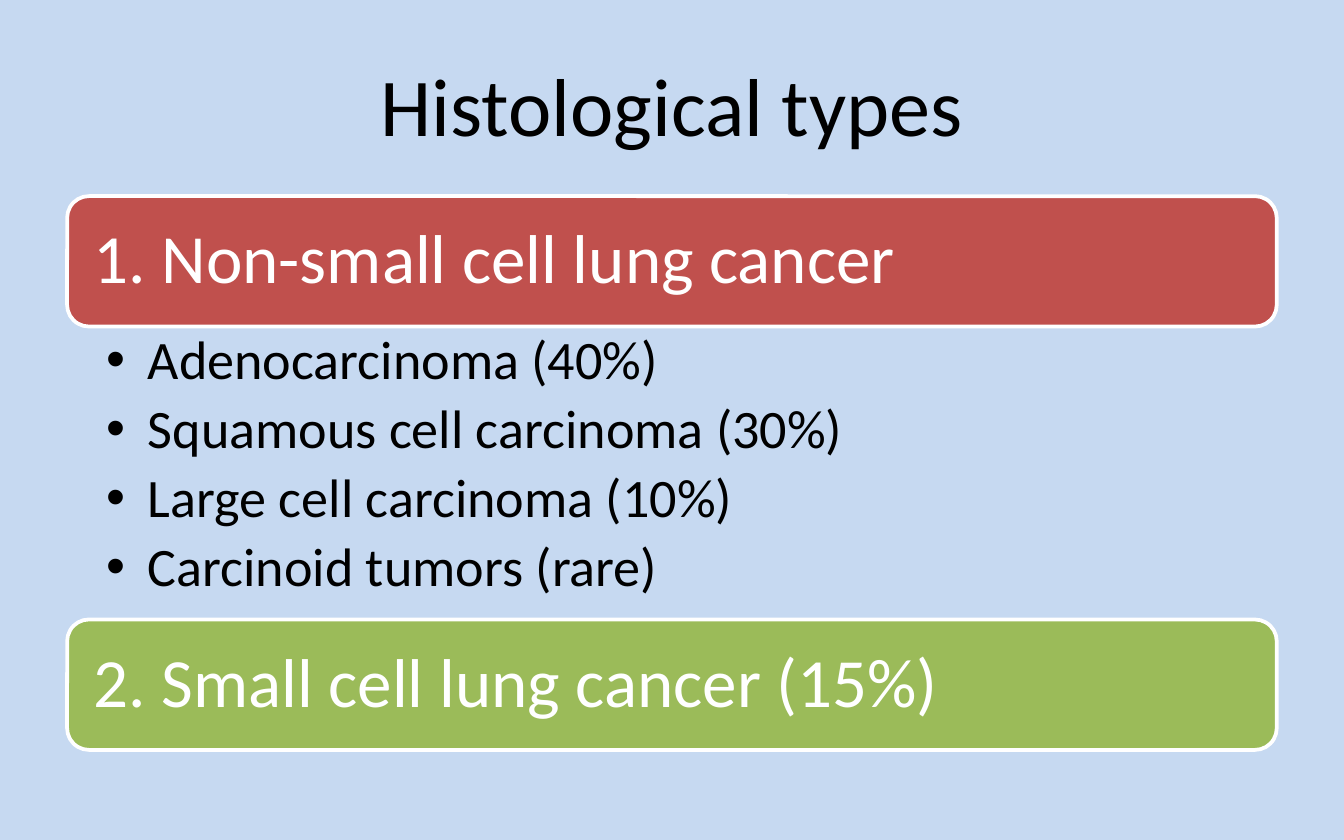
from dataclasses import dataclass

from lxml.etree import SubElement
from pptx import Presentation
from pptx.dml.color import RGBColor
from pptx.enum.shapes import MSO_SHAPE
from pptx.enum.text import MSO_ANCHOR, PP_ALIGN
from pptx.oxml.ns import qn
from pptx.slide import Slide
from pptx.text.text import TextFrame, _Paragraph
from pptx.util import Inches, Pt

COLORS = {
    "background": "C6D9F1",
    "text": "000000",
    "white": "FFFFFF",
    "red": "C0504D",
    "green": "9BBB59",
}
FONT = "Calibri"
LEFT, WIDTH = 0.5, 9
BANNER_HEIGHT = 0.97
LIST_HEIGHT = 2.18
BULLET_INDENT = 0.31


@dataclass
class CancerType:
    heading: str
    color: str
    subtypes: tuple[str, ...] = ()


CANCER_TYPES = [
    CancerType(
        "1. Non-small cell lung cancer",
        "red",
        (
            "Adenocarcinoma (40%)",
            "Squamous cell carcinoma (30%)",
            "Large cell carcinoma (10%)",
            "Carcinoid tumors (rare)",
        ),
    ),
    CancerType("2. Small cell lung cancer (15%)", "green"),
]


def rgb(name: str) -> RGBColor:
    return RGBColor.from_string(COLORS[name])


def set_frame(frame: TextFrame, anchor: MSO_ANCHOR, side: float, top: float) -> None:
    frame.word_wrap = True
    frame.vertical_anchor = anchor
    frame.margin_left = frame.margin_right = Inches(side)
    frame.margin_top = frame.margin_bottom = Inches(top)


def add_text(paragraph: _Paragraph, text: str, size: float, color: str) -> None:
    run = paragraph.add_run()
    run.text = text
    run.font.name = FONT
    run.font.size = Pt(size)
    run.font.color.rgb = rgb(color)


def add_bullet(paragraph: _Paragraph) -> None:
    properties = paragraph._p.get_or_add_pPr()
    properties.set("marL", str(Inches(BULLET_INDENT)))
    properties.set("indent", str(-Inches(BULLET_INDENT)))
    SubElement(properties, qn("a:buFont"), typeface="Arial")
    SubElement(properties, qn("a:buChar"), char="•")


def add_title(slide: Slide, text: str) -> None:
    box = slide.shapes.add_textbox(
        Inches(LEFT), Inches(0.25), Inches(WIDTH), Inches(1.04)
    )
    set_frame(box.text_frame, MSO_ANCHOR.MIDDLE, 0.1, 0.05)
    paragraph = box.text_frame.paragraphs[0]
    paragraph.alignment = PP_ALIGN.CENTER
    add_text(paragraph, text, 44, "text")


def add_banner(slide: Slide, top: float, text: str, color: str) -> None:
    banner = slide.shapes.add_shape(
        MSO_SHAPE.ROUNDED_RECTANGLE,
        Inches(LEFT), Inches(top), Inches(WIDTH), Inches(BANNER_HEIGHT),
    )
    banner.shadow.inherit = False
    banner.fill.solid()
    banner.fill.fore_color.rgb = rgb(color)
    banner.line.color.rgb = rgb("white")
    banner.line.width = Pt(2)
    set_frame(banner.text_frame, MSO_ANCHOR.MIDDLE, 0.15, 0.15)
    paragraph = banner.text_frame.paragraphs[0]
    paragraph.alignment = PP_ALIGN.LEFT
    paragraph.line_spacing = 0.9
    add_text(paragraph, text, 37, "white")


def add_subtypes(slide: Slide, top: float, subtypes: tuple[str, ...]) -> None:
    box = slide.shapes.add_textbox(
        Inches(LEFT), Inches(top), Inches(WIDTH), Inches(LIST_HEIGHT)
    )
    frame = box.text_frame
    set_frame(frame, MSO_ANCHOR.TOP, 0.29, 0.05)
    for index, subtype in enumerate(subtypes):
        paragraph = frame.add_paragraph() if index else frame.paragraphs[0]
        paragraph.line_spacing = 0.9
        paragraph.space_after = Pt(5.5)
        add_bullet(paragraph)
        add_text(paragraph, subtype, 29, "text")


def main() -> None:
    presentation = Presentation()
    presentation.slide_width = Inches(10)
    presentation.slide_height = Inches(6.25)
    slide = presentation.slides.add_slide(presentation.slide_layouts[6])

    # Background and title
    slide.background.fill.solid()
    slide.background.fill.fore_color.rgb = rgb("background")
    add_title(slide, "Histological types")

    # Banners stacked with their subtype lists
    top = 1.46
    for cancer_type in CANCER_TYPES:
        add_banner(slide, top, cancer_type.heading, cancer_type.color)
        top += BANNER_HEIGHT
        if cancer_type.subtypes:
            add_subtypes(slide, top, cancer_type.subtypes)
            top += LIST_HEIGHT

    presentation.save("out.pptx")


if __name__ == "__main__":
    main()
